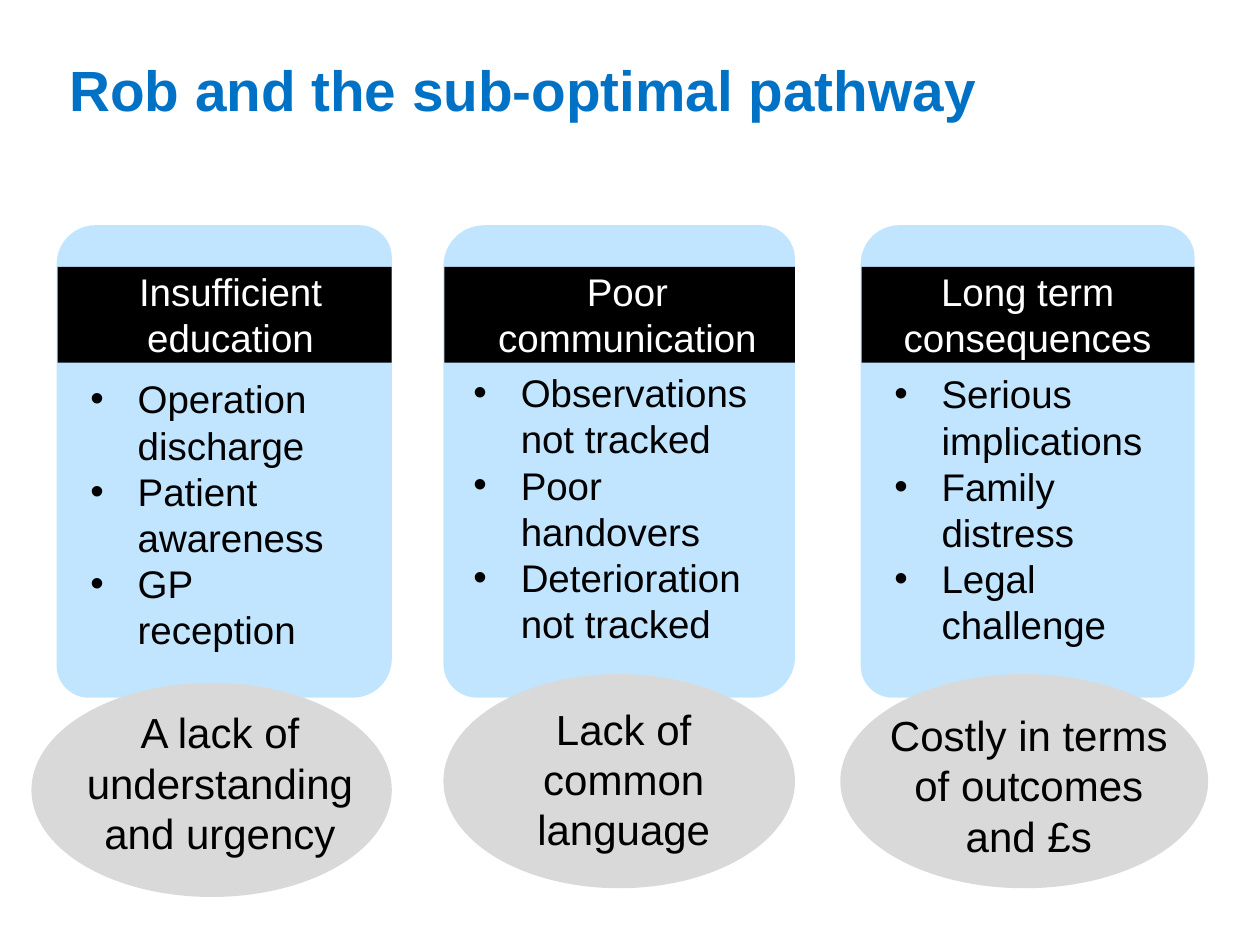
"""Build the slide on Rob and the sub-optimal pathway."""
from lxml.etree import SubElement
from pptx import Presentation
from pptx.dml.color import RGBColor
from pptx.enum.shapes import MSO_SHAPE
from pptx.enum.text import MSO_ANCHOR, PP_ALIGN
from pptx.oxml.ns import qn
from pptx.util import Pt

BLUE = RGBColor(0x00, 0x72, 0xC6)
PALE = RGBColor(0xC1, 0xE5, 0xFF)
GREY = RGBColor(0xD9, 0xD9, 0xD9)
BLACK = RGBColor(0, 0, 0)
WHITE = RGBColor(255, 255, 255)

TITLE = "Rob and the sub-optimal pathway"
COLUMNS = [
    {
        "panel": (32.4, 191.5),
        "head": ("Insufficient education", (39.6, 184.3)),
        "list": (["Operation discharge", "Patient awareness", "GP reception"],
                 (44.6, 211, 162, 167)),
        "oval": (18, 390.2, 205.9, 122.4),
        "note": ("A lack of understanding and urgency", (39.6, 400.3, 172.1, 94.3)),
    },
    {
        "panel": (253.4, 200.9),
        "head": ("Poor communication", (263.5, 190.1)),
        "list": (["Observations not tracked", "Poor handovers", "Deterioration not tracked"],
                 (263.5, 207.4, 190.1, 167)),
        "oval": (253.4, 385.2, 200.9, 122.4),
        "note": ("Lack of common language", (272.9, 398.2, 167, 94.3)),
    },
    {
        "panel": (491.8, 190.8),
        "head": ("Long term consequences", (506.2, 162)),
        "list": (["Serious implications", "Family distress", "Legal challenge"],
                 (504, 208.1, 177.1, 193.7)),
        "oval": (480.2, 385.2, 210.2, 122.4),
        "note": ("Costly in terms of outcomes and £s", (500.4, 401.8, 175, 94.3)),
    },
]
BAR_TOP, BAR_HIGH, HEAD_HIGH = 152.6, 54.7, 60.5


def place(box):
    return [Pt(v) for v in box]


def draw(slide, kind, box, fill):
    shape = slide.shapes.add_shape(kind, *place(box))
    shape.shadow.inherit = False
    shape.fill.solid()
    shape.fill.fore_color.rgb = fill
    shape.line.fill.background()
    return shape


def style(para, size, color, bold=False):
    for run in para.runs:
        run.font.name = "Arial"
        run.font.size = Pt(size)
        run.font.bold = bold
        run.font.color.rgb = color


def bullet(para):
    props = para._p.get_or_add_pPr()
    props.set("marL", str(Pt(27)))
    props.set("indent", str(-Pt(27)))
    SubElement(props, qn("a:buFont")).set("typeface", "Arial")
    SubElement(props, qn("a:buChar")).set("char", "•")


def write(slide, lines, box, size, color, listed=False):
    frame = slide.shapes.add_textbox(*place(box)).text_frame
    frame.word_wrap = True
    frame.text = "\n".join(lines)
    for para in frame.paragraphs:
        if listed:
            bullet(para)
        else:
            para.alignment = PP_ALIGN.CENTER
        style(para, size, color)


def main():
    deck = Presentation()
    deck.slide_width, deck.slide_height = Pt(720), Pt(540)
    slide = deck.slides.add_slide(deck.slide_layouts[5])

    title = slide.shapes.title
    title.left, title.top, title.width, title.height = place((32.4, 24.5, 579.6, 52.6))
    title.text_frame.text = TITLE
    title.text_frame.vertical_anchor = MSO_ANCHOR.MIDDLE
    para = title.text_frame.paragraphs[0]
    para.alignment = PP_ALIGN.LEFT
    style(para, 32.4, BLUE, True)

    head_top = BAR_TOP + (BAR_HIGH - HEAD_HIGH) / 2
    for col in COLUMNS:
        left, width = col["panel"]
        panel = draw(slide, MSO_SHAPE.ROUND_2_DIAG_RECTANGLE, (left, 128.7, width, 270), PALE)
        panel.adjustments[0], panel.adjustments[1] = 0.116, 0.096
        draw(slide, MSO_SHAPE.RECTANGLE, (left + 0.5, BAR_TOP, width - 0.5, BAR_HIGH), BLACK)
        draw(slide, MSO_SHAPE.OVAL, col["oval"], GREY)
        note, box = col["note"]
        write(slide, [note], box, 24, BLACK)
        items, box = col["list"]
        write(slide, items, box, 22, BLACK, True)
        head, (start, span) = col["head"]
        write(slide, [head], (start, head_top, span, HEAD_HIGH), 22, WHITE)

    deck.save("out.pptx")


if __name__ == "__main__":
    main()
